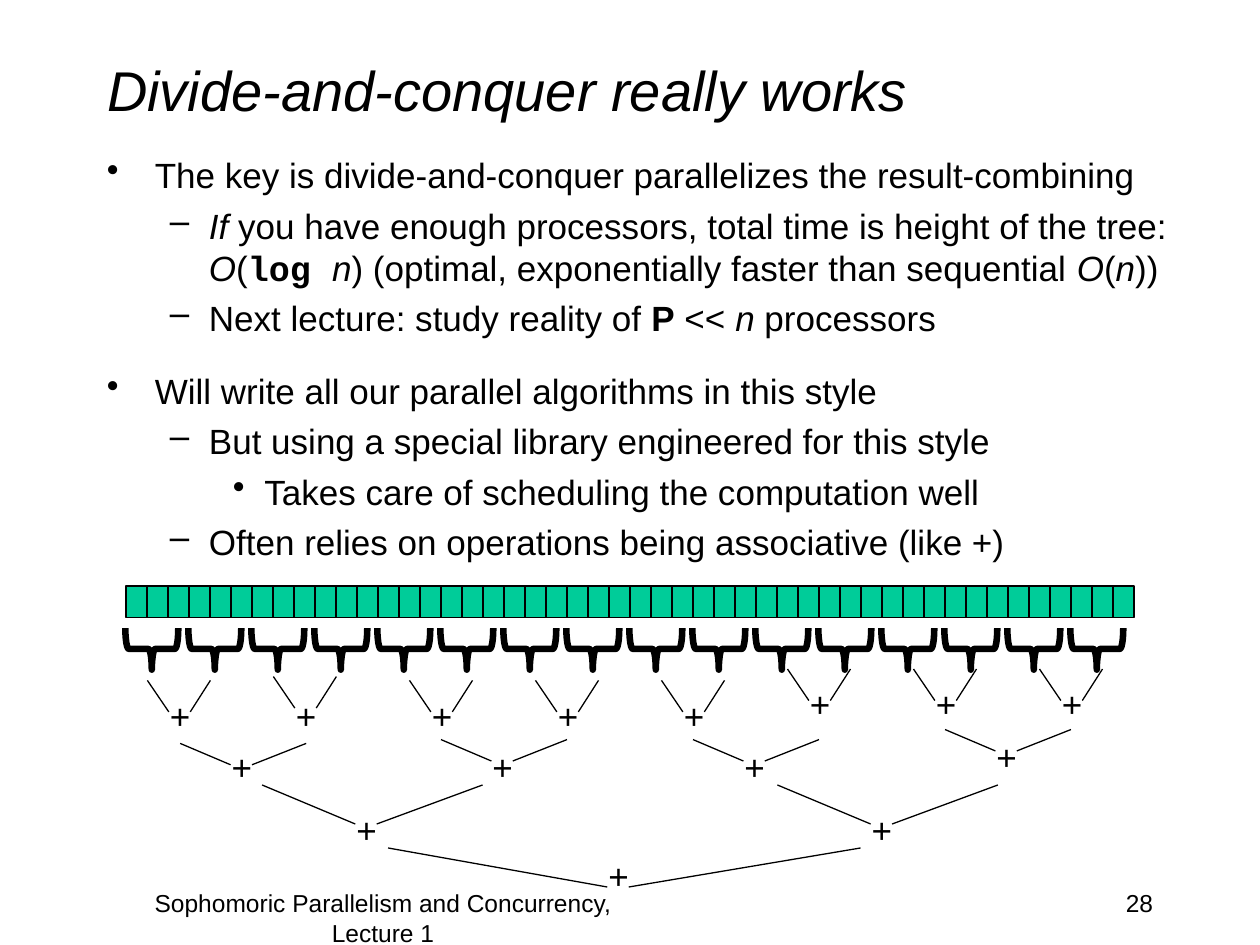
"""Build a slide on divide-and-conquer with a tree of sums."""
import pptx
import pptx.util
import pptx.dml.color
import pptx.enum.shapes
import pptx.enum.text
import pptx.oxml.ns
from lxml import etree

Inches = pptx.util.Inches
Pt = pptx.util.Pt
Kind = pptx.enum.shapes.MSO_SHAPE
Align = pptx.enum.text.PP_ALIGN
Anchor = pptx.enum.text.MSO_ANCHOR


def tint(code):
    return pptx.dml.color.RGBColor.from_string(code)


def say(par, text, size=20, font="Arial", color="000000", bold=False, slant=False):
    run = par.add_run()
    run.text = text
    face = run.font
    face.size, face.name = Pt(size), font
    face.bold, face.italic = bold, slant
    face.color.rgb = tint(color)


class Deck:
    ink = "000000"
    green = "00CC99"
    levels = [("•", 0.38, 0.38), ("–", 0.81, 0.31), ("•", 1.25, 0.25)]

    def __init__(self, slide):
        self.slide = slide

    def title(self, text, *box):
        shape = self.slide.shapes.title
        shape.left, shape.top, shape.width, shape.height = map(Inches, box)
        frame = shape.text_frame
        frame.vertical_anchor = Anchor.MIDDLE
        par = frame.paragraphs[0]
        par.alignment = Align.LEFT
        say(par, text, size=32, slant=True)

    def frame(self, *box, wrap=True):
        frame = self.slide.shapes.add_textbox(*map(Inches, box)).text_frame
        frame.word_wrap = wrap
        return frame

    def label(self, text, *box, align=Align.LEFT, wrap=True, **style):
        par = self.frame(*box, wrap=wrap).paragraphs[0]
        par.alignment = align
        say(par, text, **style)

    def bullets(self, items, *box):
        frame = self.frame(*box)
        for index, (level, gap, parts) in enumerate(items):
            par = frame.add_paragraph() if index else frame.paragraphs[0]
            par.level = level
            par.space_before = Pt(gap)
            mark, left, hang = self.levels[level]
            props = par._p.get_or_add_pPr()
            props.set("marL", str(Inches(left)))
            props.set("indent", str(-Inches(hang)))
            bullet = etree.SubElement(props, pptx.oxml.ns.qn("a:buChar"))
            bullet.set("char", mark)
            for text, style in parts:
                say(par, text, **style)

    def shape(self, kind, *box, fill=None, weight=0.75, turn=0):
        shape = self.slide.shapes.add_shape(kind, *map(Inches, box))
        shape.shadow.inherit = False
        shape.rotation = turn
        if fill:
            shape.fill.solid()
            shape.fill.fore_color.rgb = tint(fill)
        else:
            shape.fill.background()
        shape.line.color.rgb = tint(self.ink)
        shape.line.width = Pt(weight)

    def line(self, *ends):
        kind = pptx.enum.shapes.MSO_CONNECTOR.STRAIGHT
        line = self.slide.shapes.add_connector(kind, *map(Inches, ends))
        line.line.color.rgb = tint(self.ink)
        line.line.width = Pt(0.75)
        etree.SubElement(line._element.spPr, pptx.oxml.ns.qn("a:effectLst"))

    def join(self, left, top, plus, reach, span, drop):
        mid, low = left + reach, top + drop
        self.line(left, top, mid, low)
        self.line(left + span, top, mid + 0.17, low)
        self.label("+", mid - 0.09, plus, 0.36, 0.44, wrap=False)


def main():
    show = pptx.Presentation()
    show.slide_width, show.slide_height = Inches(10), Inches(7.5)
    deck = Deck(show.slides.add_slide(show.slide_layouts[5]))
    deck.title("Divide-and-conquer really works", 0.75, 0.08, 8.5, 1.25)

    plain, slant, bold = {}, {"slant": True}, {"bold": True}
    code = {"font": "Courier New", "bold": True}
    gap, wide = 4.8, 17.6
    deck.bullets([
        (0, gap, [("The key is divide-and-conquer parallelizes the result-combining", plain)]),
        (1, gap, [
            ("If", slant),
            (" you have enough processors, total time is height of the tree: ", plain),
            ("O", slant), ("(", plain), ("log ", code), ("n", slant),
            (") (optimal, exponentially faster than sequential ", plain),
            ("O", slant), ("(", plain), ("n", slant), ("))", plain)]),
        (1, gap, [
            ("Next lecture: study reality of ", plain), ("P", bold),
            (" << ", plain), ("n", slant), (" processors", plain)]),
        (0, wide, [("Will write all our parallel algorithms in this style", plain)]),
        (1, gap, [("But using a special library engineered for this style", plain)]),
        (2, gap, [("Takes care of scheduling the computation well", plain)]),
        (1, gap, [("Often relies on operations being associative (like +)", plain)]),
    ], 0.75, 1.17, 8.92, 3.33)

    deck.label("28", 7.17, 7, 2.08, 0.5, align=Align.RIGHT, size=14)
    deck.label("Sophomoric Parallelism and Concurrency, Lecture 1",
               0.83, 7, 4.42, 0.5, align=Align.CENTER, size=14)

    for cell in range(48):
        deck.shape(Kind.RECTANGLE, 1 + cell / 6, 4.65, 1 / 6, 0.25, fill=deck.green)
    for brace in range(16):
        deck.shape(Kind.LEFT_BRACE, 1.04 + brace / 2, 4.94, 0.33, 0.42,
                   weight=3.75, turn=270)

    tree = [
        (0.17, 0.5, 0.25, [
            (1.17, 5.4, 5.46), (2.17, 5.37, 5.46), (3.25, 5.4, 5.46), (4.25, 5.4, 5.46),
            (5.25, 5.4, 5.46), (6.25, 5.31, 5.37), (7.25, 5.31, 5.37), (8.25, 5.31, 5.37)]),
        (0.4, 1, 0.17, [
            (1.43, 5.9, 5.87), (3.5, 5.87, 5.87), (5.5, 5.87, 5.87), (7.5, 5.79, 5.79)]),
        (0.74, 1.75, 0.31, [(2.08, 6.23, 6.37), (6.17, 6.23, 6.37)]),
        (1.74, 3.75, 0.31, [(3.08, 6.73, 6.73)]),
    ]
    for reach, span, drop, nodes in tree:
        for left, top, plus in nodes:
            deck.join(left, top, plus, reach, span, drop)

    show.save("out.pptx")


if __name__ == "__main__":
    main()
